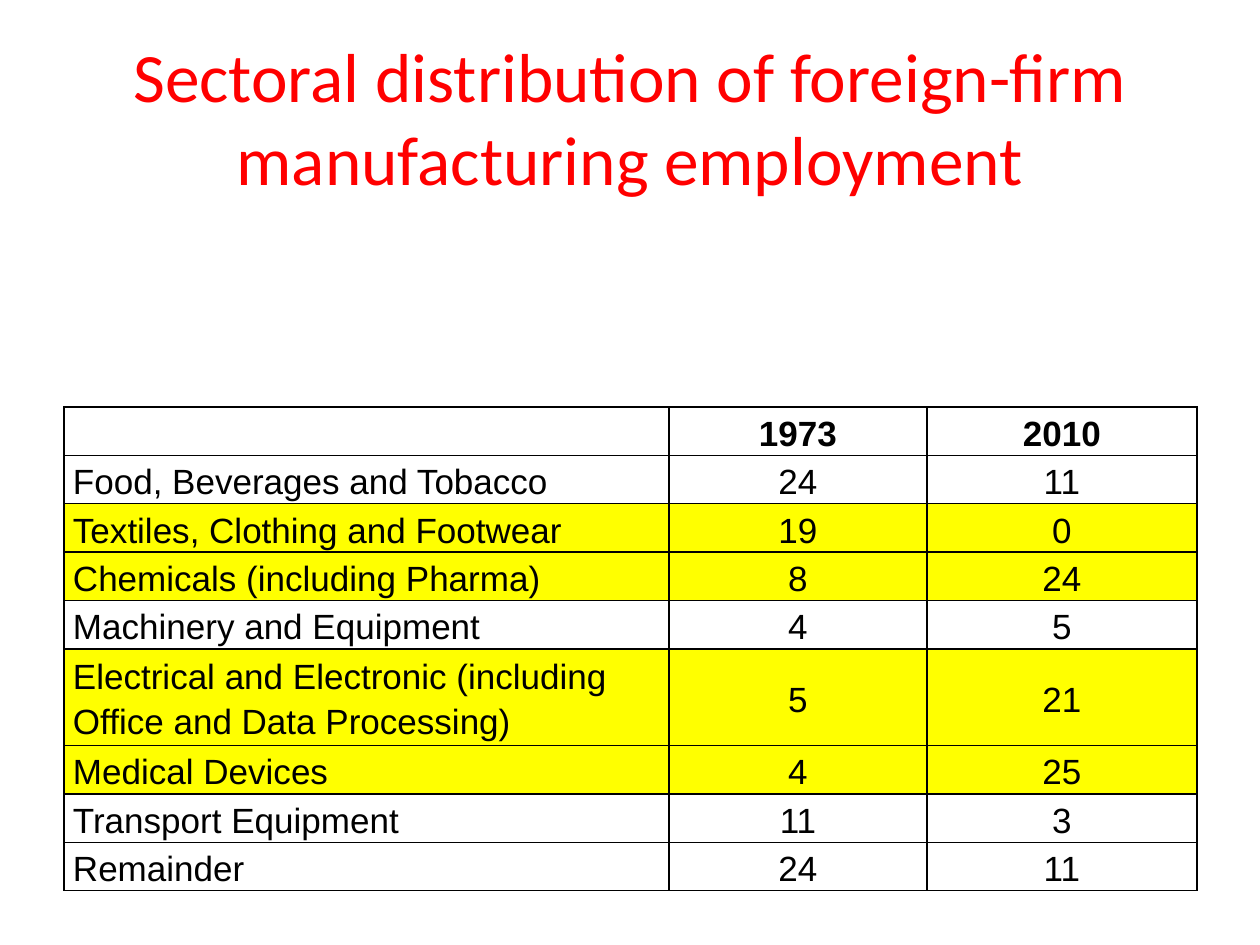
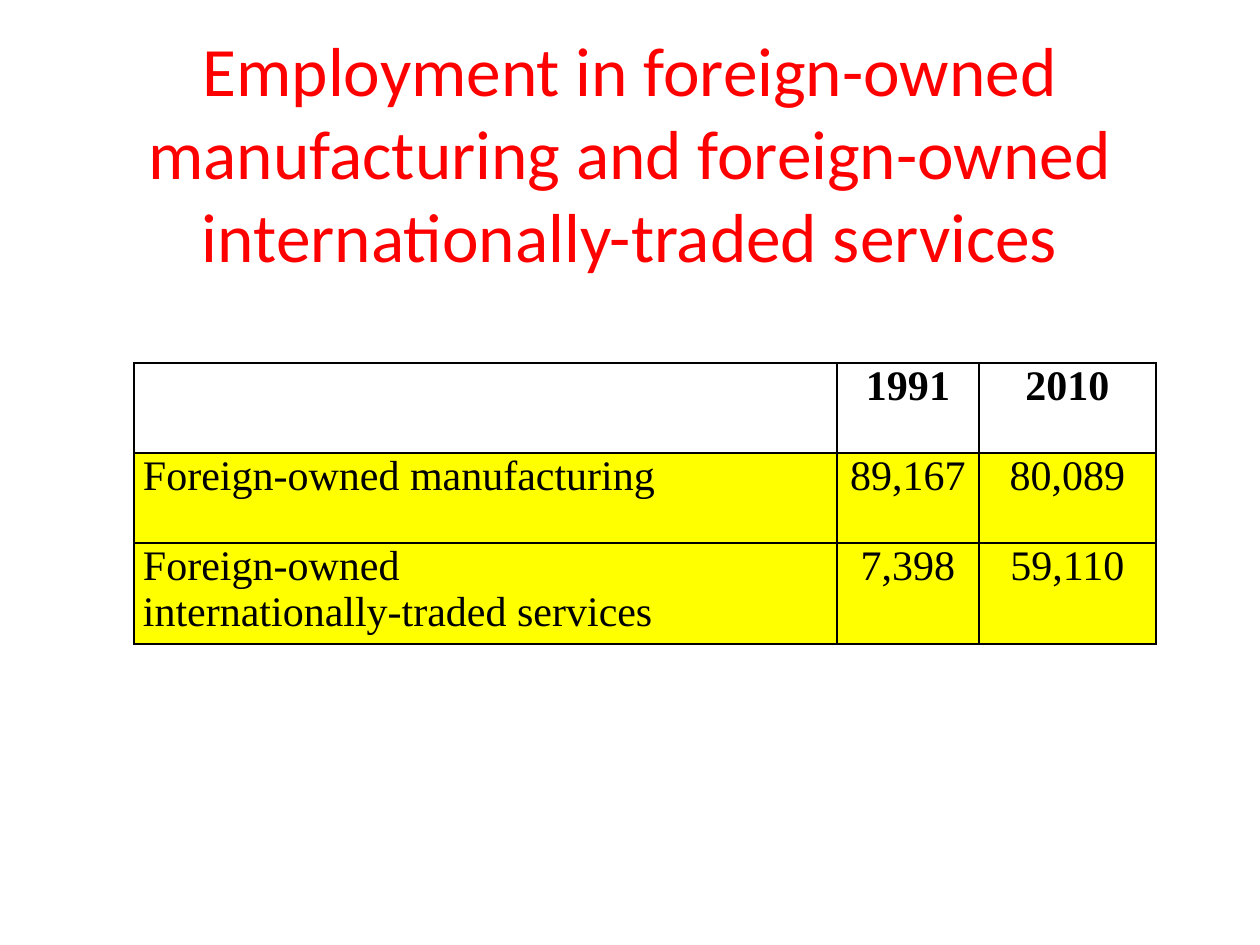
from lxml import etree
from pptx import Presentation
from pptx.dml.color import RGBColor
from pptx.enum.text import MSO_ANCHOR, PP_ALIGN
from pptx.oxml.ns import qn
from pptx.util import Emu, Pt

CENTER, LEFT = PP_ALIGN.CENTER, PP_ALIGN.LEFT
MIDDLE, TOP = MSO_ANCHOR.MIDDLE, MSO_ANCHOR.TOP
COLORS = {"title": "FF0000", "text": "000000", "border": "000000", "highlight": "FFFF00"}
EMU_PER_PX = 914400 / 126
BORDER_SIDES = ("a:lnL", "a:lnR", "a:lnT", "a:lnB")


def px(length):
    return Emu(round(length * EMU_PER_PX))


def write_text(text_frame, text, alignment, line_spacing, font_values, color):
    text_frame.text = text
    for paragraph in text_frame.paragraphs:
        paragraph.alignment = alignment
        paragraph.line_spacing = line_spacing
        for run in paragraph.runs:
            for name, value in font_values.items():
                setattr(run.font, name, value)
            run.font.color.rgb = RGBColor.from_string(COLORS[color])


SLIDES = [
    {
        "title": "Sectoral distribution of foreign-firm manufacturing employment",
        "title_height": 157,
        "left": 64,
        "top": 407,
        "columns": (605, 258, 270),
        "row_heights": (45, 45, 45, 45, 45, 90, 45, 45, 45),
        "font": {"name": "Arial", "size": Pt(20)},
        "anchor": MIDDLE,
        "line_spacing": 1.15,
        "highlighted": (2, 3, 5, 6),
        "rows": [
            ("", "1973", "2010"),
            ("Food, Beverages and Tobacco", "24", "11"),
            ("Textiles, Clothing and Footwear", "19", "0"),
            ("Chemicals (including Pharma)", "8", "24"),
            ("Machinery and Equipment", "4", "5"),
            ("Electrical and Electronic (including Office and Data Processing)", "5", "21"),
            ("Medical Devices", "4", "25"),
            ("Transport Equipment", "11", "3"),
            ("Remainder", "24", "11"),
        ],
    },
    {
        "title": "Employment in foreign-owned manufacturing and foreign-owned "
                 "internationally-traded services",
        "title_height": 227,
        "left": 134,
        "top": 363,
        "columns": (703, 142, 177),
        "row_heights": (90, 90, 92),
        "font": {"name": "Times New Roman", "size": Pt(24)},
        "anchor": TOP,
        "line_spacing": 1.0,
        "highlighted": (1, 2),
        "rows": [
            ("", "1991", "2010"),
            ("Foreign-owned manufacturing", "89,167", "80,089"),
            ("Foreign-owned\ninternationally-traded services", "7,398", "59,110"),
        ],
    },
]

presentation = Presentation()
presentation.slide_width, presentation.slide_height = px(1260), px(945)

for content in SLIDES:
    slide = presentation.slides.add_slide(presentation.slide_layouts[6])

    title = slide.shapes.add_textbox(px(63), px(38), px(1134), px(content["title_height"]))
    title.text_frame.word_wrap = True
    title.text_frame.vertical_anchor = MIDDLE
    write_text(title.text_frame, content["title"], CENTER, 1.0,
               {"name": "Calibri", "size": Pt(39.6)}, "title")

    rows, columns, heights = content["rows"], content["columns"], content["row_heights"]
    table = slide.shapes.add_table(
        len(rows), len(columns), px(content["left"]), px(content["top"]),
        px(sum(columns)), px(sum(heights))).table
    table.first_row = False
    table.horz_banding = False
    for column, width in zip(table.columns, columns):
        column.width = px(width)

    for row_index, row in enumerate(rows):
        table.rows[row_index].height = px(heights[row_index])
        for column_index, text in enumerate(row):
            cell = table.cell(row_index, column_index)
            cell_format = {
                "margin_left": px(9), "margin_right": px(9),
                "margin_top": 0, "margin_bottom": 0,
                "vertical_anchor": content["anchor"],
            }
            for name, value in cell_format.items():
                setattr(cell, name, value)
            write_text(cell.text_frame, text, CENTER if column_index else LEFT,
                       content["line_spacing"],
                       {**content["font"], "bold": row_index == 0}, "text")

            properties = cell._tc.get_or_add_tcPr()
            for side in BORDER_SIDES:
                line = etree.SubElement(properties, qn(side), w=str(Pt(1)))
                line_fill = etree.SubElement(line, qn("a:solidFill"))
                etree.SubElement(line_fill, qn("a:srgbClr"), val=COLORS["border"])
            if row_index in content["highlighted"]:
                cell.fill.solid()
                cell.fill.fore_color.rgb = RGBColor.from_string(COLORS["highlight"])
            else:
                cell.fill.background()

presentation.save("out.pptx")
